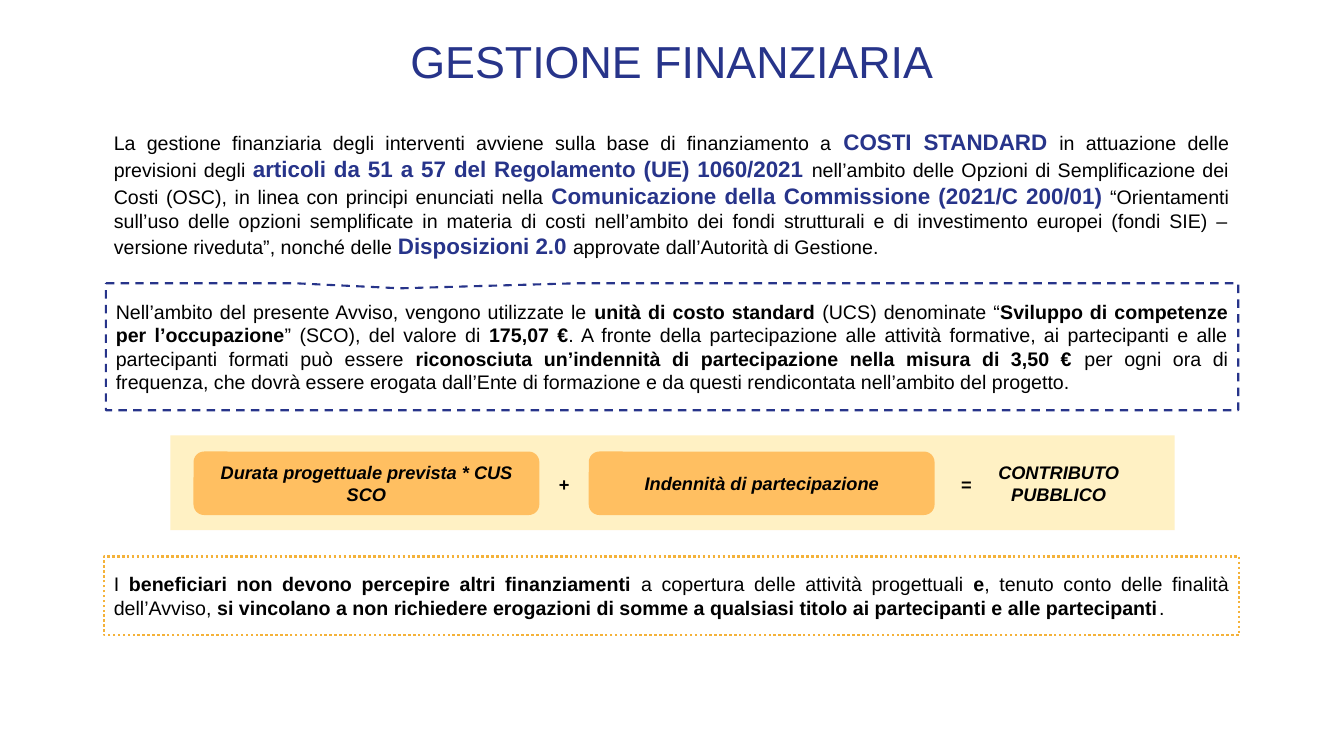
"""Build the GESTIONE FINANZIARIA slide."""
from dataclasses import dataclass
from typing import Optional

from lxml import etree
from pptx import Presentation
from pptx.dml.color import RGBColor
from pptx.enum.dml import MSO_LINE
from pptx.enum.shapes import MSO_SHAPE
from pptx.enum.text import MSO_ANCHOR, PP_ALIGN
from pptx.oxml.ns import qn
from pptx.util import Inches, Pt

RECT, ROUND = MSO_SHAPE.RECTANGLE, MSO_SHAPE.ROUNDED_RECTANGLE
CALLOUT = MSO_SHAPE.RECTANGULAR_CALLOUT
DASH, DOT = MSO_LINE.DASH, MSO_LINE.ROUND_DOT
CENTER, JUSTIFY = PP_ALIGN.CENTER, PP_ALIGN.JUSTIFY
TOP, MIDDLE = MSO_ANCHOR.TOP, MSO_ANCHOR.MIDDLE
WIDTH, HEIGHT = Inches(13.33), Inches(7.5)


@dataclass(frozen=True)
class Theme:
    font: str = "Arial"
    black: str = "000000"
    white: str = "FFFFFF"
    blue: str = "27348A"
    amber: str = "F4B23A"
    orange: str = "FFBF61"
    cream: str = "FFE79B"
    title: int = 32
    lead: int = 16
    body: int = 14
    formula: int = 13


T = Theme()


@dataclass(frozen=True)
class Box:
    """Position and size in percent of the slide."""
    x: float
    y: float
    w: float
    h: float


@dataclass(frozen=True)
class Style:
    size: int
    color: str = T.black
    bold: bool = False
    italic: bool = False


@dataclass(frozen=True)
class Border:
    color: str
    width: float
    dash: MSO_LINE


@dataclass(frozen=True)
class Block:
    """A shape whose text switches to the strong style at each bar."""
    box: Box
    text: str = ""
    plain: Style = Style(T.body)
    strong: Style = Style(T.body, bold=True)
    shape: Optional[MSO_SHAPE] = None
    fill: Optional[str] = None
    alpha: int = 100
    border: Optional[Border] = None
    tip: tuple[float, ...] = ()
    align: PP_ALIGN = CENTER
    anchor: MSO_ANCHOR = MIDDLE
    inset: tuple[float, float] = (0.1, 0.05)
    spacing: Optional[float] = None
    after: int = 0


def paint(sp, block: Block) -> None:
    """Set the fill, border and callout tip of a preset shape."""
    sp.shadow.inherit = False
    for i, value in enumerate(block.tip):
        sp.adjustments[i] = value
    if block.fill:
        sp.fill.solid()
        sp.fill.fore_color.rgb = RGBColor.from_string(block.fill)
        if block.alpha < 100:
            color = sp.fill._xPr.find(qn("a:solidFill"))[0]
            etree.SubElement(color, qn("a:alpha"), val=str(block.alpha * 1000))
    else:
        sp.fill.background()
    if block.border:
        sp.line.color.rgb = RGBColor.from_string(block.border.color)
        sp.line.width = Pt(block.border.width)
        sp.line.dash_style = block.border.dash
    else:
        sp.line.fill.background()


def write(tf, block: Block) -> None:
    """Write the block's text, alternating plain and strong runs."""
    tf.word_wrap = True
    tf.vertical_anchor = block.anchor
    tf.margin_left = tf.margin_right = Inches(block.inset[0])
    tf.margin_top = tf.margin_bottom = Inches(block.inset[1])
    p = tf.paragraphs[0]
    p.alignment = block.align
    p.line_spacing = block.spacing
    p.space_after = Pt(block.after)
    for i, part in enumerate(block.text.split("|")):
        style = block.strong if i % 2 else block.plain
        r = p.add_run()
        r.text = part
        r.font.name = T.font
        r.font.size = Pt(style.size)
        r.font.bold = style.bold
        r.font.italic = style.italic
        r.font.color.rgb = RGBColor.from_string(style.color)


def draw(shapes, block: Block) -> None:
    """Add one block to a shape collection."""
    b = block.box
    frame = [round(share * side / 100) for share, side in
             ((b.x, WIDTH), (b.y, HEIGHT), (b.w, WIDTH), (b.h, HEIGHT))]
    if block.shape is None:
        sp = shapes.add_textbox(*frame)
    else:
        sp = shapes.add_shape(block.shape, *frame)
        paint(sp, block)
    if block.text:
        write(sp.text_frame, block)


TERM = Style(T.formula, bold=True, italic=True)
SIGN = Style(T.formula, bold=True)

TITLE = Block(Box(7.88, 5.33, 84.25, 9.07), "GESTIONE FINANZIARIA",
              Style(T.title, T.blue), anchor=TOP, inset=(0, 0), spacing=0.9)
NOTICE = Block(
    Box(7.73, 73.6, 84.47, 10.4),
    "I |beneficiari non devono percepire altri finanziamenti |a copertura delle "
    "attività progettuali |e|, tenuto conto delle finalità dell’Avviso, |si "
    "vincolano a non richiedere erogazioni di somme a qualsiasi titolo ai "
    "partecipanti e alle partecipanti|.",
    shape=RECT, fill=T.white, border=Border(T.amber, 1.75, DOT),
    align=JUSTIFY, after=2)
INTRO = Block(
    Box(7.73, 16.27, 84.47, 18.8),
    "La gestione finanziaria degli interventi avviene sulla base di "
    "finanziamento a |COSTI STANDARD |in attuazione delle previsioni degli "
    "|articoli da 51 a 57 del Regolamento (UE) 1060/2021 |nell’ambito delle "
    "Opzioni di Semplificazione dei Costi (OSC), in linea con principi enunciati "
    "nella |Comunicazione della Commissione (2021/C 200/01)| “Orientamenti "
    "sull’uso delle opzioni semplificate in materia di costi nell’ambito dei "
    "fondi strutturali e di investimento europei (fondi SIE) – versione "
    "riveduta”, nonché delle |Disposizioni 2.0 |approvate dall’Autorità di "
    "Gestione.",
    strong=Style(T.lead, T.blue, bold=True), align=JUSTIFY, anchor=TOP)
UNIT_COST = Block(
    Box(7.88, 37.47, 84.25, 16.8),
    "Nell’ambito del presente Avviso, vengono utilizzate le |unità di costo "
    "standard |(UCS) denominate “|Sviluppo di competenze per l’occupazione|” "
    "(SCO), del valore di |175,07 €|. A fronte della partecipazione alle "
    "attività formative, ai partecipanti e alle partecipanti formati può essere "
    "|riconosciuta un’indennità di partecipazione nella misura di 3,50 € |per "
    "ogni ora di frequenza, che dovrà essere erogata dall’Ente di formazione e "
    "da questi rendicontata nell’ambito del progetto.",
    shape=CALLOUT, fill=T.white, border=Border(T.blue, 1.5, DASH),
    tip=(-0.24, -0.46), align=JUSTIFY, inset=(0.1, 0.16))
FORMULA = [
    Block(Box(12.68, 57.6, 74.72, 12.53), shape=RECT, fill=T.cream, alpha=58),
    *(Block(Box(x, 59.73, 25.73, 8.4), text, TERM, shape=ROUND, fill=T.orange)
      for x, text in ((14.4, "Durata progettuale prevista * CUS SCO"),
                      (43.81, "Indennità di partecipazione"))),
    Block(Box(71.19, 58.13, 15.15, 11.6), "CONTRIBUTO PUBBLICO", TERM,
          shape=ROUND),
    *(Block(Box(x, 61.87, w, 4.4), text, SIGN, inset=(0.06, 0.06))
      for x, w, text in ((40.51, 2.93, "+"), (70.14, 3.53, "="))),
]


def main() -> None:
    """Assemble and save the slide."""
    prs = Presentation()
    prs.slide_width, prs.slide_height = WIDTH, HEIGHT
    s = prs.slides.add_slide(prs.slide_layouts[6])
    for block in (TITLE, NOTICE, INTRO):
        draw(s.shapes, block)
    group = s.shapes.add_group_shape()
    for block in FORMULA:
        draw(group.shapes, block)
    draw(s.shapes, UNIT_COST)
    prs.save("out.pptx")


if __name__ == "__main__":
    main()
